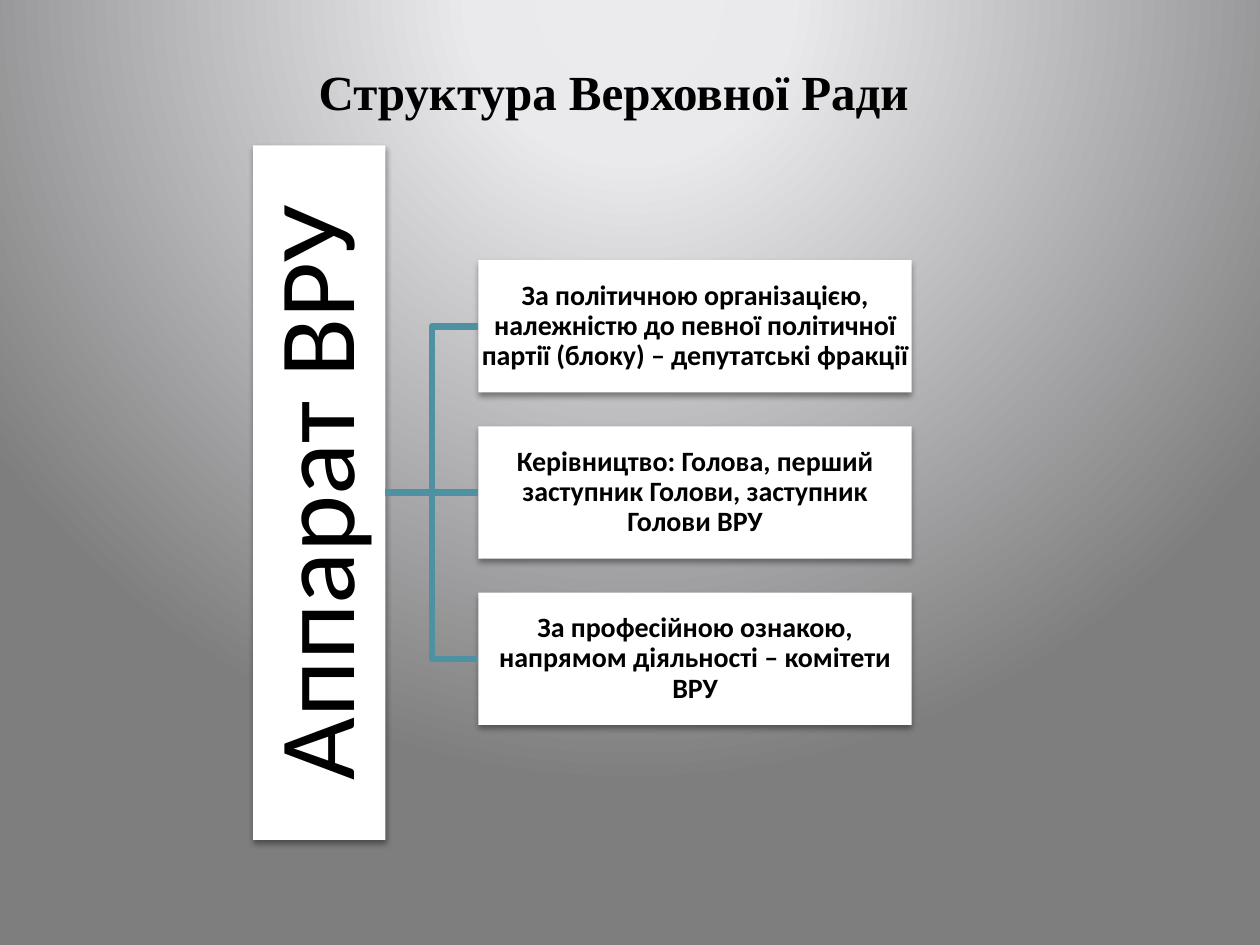
"""Build the slide showing the structure of the Verkhovna Rada."""
import pptx
import pptx.dml.color
import pptx.enum.shapes
import pptx.enum.text
import pptx.oxml
import pptx.oxml.ns
import pptx.util

Pt = pptx.util.Pt

TITLE = "Структура Верховної Ради"
ROOT = "Аппарат ВРУ"
BRANCHES = [
    "За політичною організацією, належністю до певної політичної партії (блоку) – депутатські фракції",
    "Керівництво: Голова, перший заступник Голови, заступник Голови ВРУ",
    "За професійною ознакою, напрямом діяльності – комітети ВРУ",
]
COLOURS = {"text": "000000", "box": "FFFFFF", "line": "4D91A3", "shadow": "000000"}
GRADIENT = [(0, "EBEBED"), (12, "EBEBED"), (20, "EAEAED"), (100, "7E7E7F")]

MIDDLE = 281.5
ROOT_LEFT, ROOT_WIDTH, ROOT_HEIGHT = 144.7, 75.6, 396.9
BRANCH_LEFT, BRANCH_WIDTH, BRANCH_HEIGHT, BRANCH_PITCH = 273.4, 247.6, 75.6, 95
NAMESPACE = pptx.oxml.ns.nsdecls("a")


def colour(name):
    return pptx.dml.color.RGBColor.from_string(COLOURS[name])


def set_background(slide):
    stops = "".join(
        f'<a:gs pos="{position * 1000}"><a:srgbClr val="{value}"/></a:gs>'
        for position, value in GRADIENT
    )
    gradient = pptx.oxml.parse_xml(
        f'<a:gradFill {NAMESPACE} rotWithShape="1"><a:gsLst>{stops}</a:gsLst>'
        '<a:path path="circle"><a:fillToRect l="10000" t="-25000" r="10000" b="125000"/>'
        "</a:path></a:gradFill>"
    )
    slide.background.fill.solid()
    solid = slide.element.xpath(".//p:bgPr/a:solidFill")[0]
    solid.getparent().replace(solid, gradient)


def format_text(frame, text, font_name, size, bold):
    frame.text = text
    paragraph = frame.paragraphs[0]
    paragraph.alignment = pptx.enum.text.PP_ALIGN.CENTER
    font = paragraph.font
    font.name, font.size, font.bold = font_name, Pt(size), bold
    font.color.rgb = colour("text")
    return paragraph


def add_title(slide):
    title = slide.shapes.title
    title.left, title.top, title.width, title.height = Pt(172.8), Pt(31.7), Pt(355.7), Pt(41)
    frame = title.text_frame
    format_text(frame, TITLE, "Times New Roman", 28, True)
    frame.word_wrap = False
    frame.auto_size = pptx.enum.text.MSO_AUTO_SIZE.SHAPE_TO_FIT_TEXT


def add_box(slide, text, left, middle, width, height, size, bold, inset):
    box = slide.shapes.add_shape(
        pptx.enum.shapes.MSO_SHAPE.RECTANGLE,
        Pt(left), Pt(middle - height / 2), Pt(width), Pt(height),
    )
    box.fill.solid()
    box.fill.fore_color.rgb = colour("box")
    box.line.fill.background()
    box.shadow.inherit = False
    box.element.spPr.xpath("a:effectLst")[0].append(pptx.oxml.parse_xml(
        f'<a:outerShdw {NAMESPACE} blurRad="{Pt(3.5)}" dist="{Pt(2)}" dir="5400000"'
        f' rotWithShape="0"><a:srgbClr val="{COLOURS["shadow"]}"><a:alpha val="38000"/>'
        "</a:srgbClr></a:outerShdw>"
    ))
    frame = box.text_frame
    frame.word_wrap = True
    frame.vertical_anchor = pptx.enum.text.MSO_ANCHOR.MIDDLE
    frame.margin_left = frame.margin_right = frame.margin_top = frame.margin_bottom = Pt(inset)
    format_text(frame, text, "Calibri", size, bold).line_spacing = 0.9
    return box


def join(slide, root, branch, kind):
    connector = slide.shapes.add_connector(kind, 0, 0, 0, 0)
    connector.begin_connect(root, 3)
    connector.end_connect(branch, 1)
    connector.line.color.rgb = colour("line")
    connector.line.width = Pt(3.78)
    connector.element.spPr.append(pptx.oxml.parse_xml(f"<a:effectLst {NAMESPACE}/>"))


def main():
    presentation = pptx.Presentation()
    presentation.slide_width, presentation.slide_height = Pt(720), Pt(540)
    slide = presentation.slides.add_slide(presentation.slide_layouts[5])
    set_background(slide)
    add_title(slide)

    root = add_box(slide, ROOT, ROOT_LEFT, MIDDLE, ROOT_WIDTH, ROOT_HEIGHT, 62, False, 3)
    root.text_frame._txBody.bodyPr.set("vert", "vert270")

    kinds = pptx.enum.shapes.MSO_CONNECTOR
    for index, text in enumerate(BRANCHES):
        offset = (index - (len(BRANCHES) - 1) / 2) * BRANCH_PITCH
        branch = add_box(slide, text, BRANCH_LEFT, MIDDLE + offset,
                         BRANCH_WIDTH, BRANCH_HEIGHT, 16, True, 0.8)
        join(slide, root, branch, kinds.ELBOW if offset else kinds.STRAIGHT)

    presentation.save("out.pptx")


if __name__ == "__main__":
    main()
